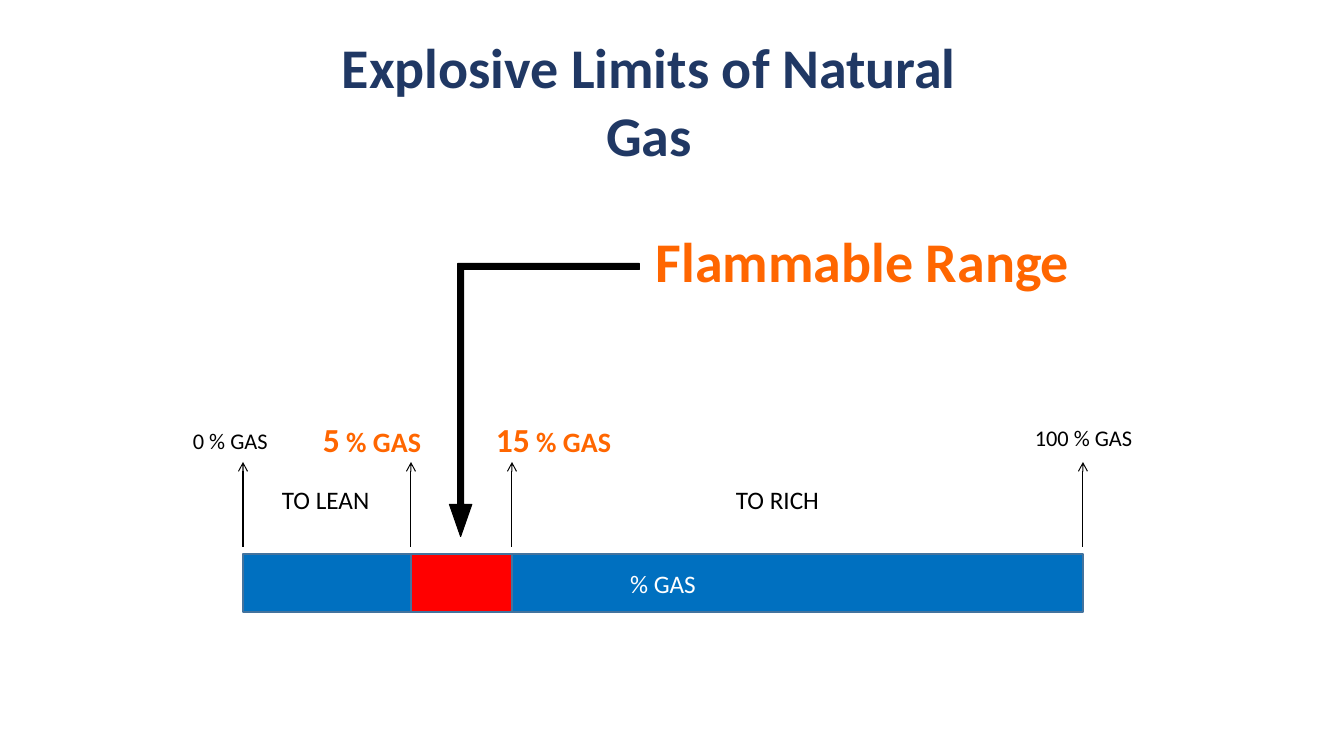
"""Builds the slide on the explosive limits of natural gas."""
import pptx
import pptx.dml.color
import pptx.enum.shapes
import pptx.enum.text
import pptx.oxml
import pptx.oxml.ns
import pptx.util

SCALE = 914400 / 100.8
SHAPE = pptx.enum.shapes.MSO_SHAPE
ALIGN = pptx.enum.text.PP_ALIGN
NAVY, BLUE, EDGE, RED = "203864", "0070C0", "43739E", "FF0000"
ORANGE, BLACK, WHITE = "FF6600", "000000", "FFFFFF"

LABELS = [
    ((299, 28, 700, 146), [("Explosive Limits of Natural Gas", 40)], NAVY, True, ALIGN.CENTER, True),
    ((646, 222, 436, 77), [("Flammable Range", 40)], ORANGE, True, ALIGN.LEFT, True),
    ((183, 422, 96, 37), [("0 % GAS", 16)], BLACK, False, ALIGN.LEFT, False),
    ((313, 414, 130, 50), [("5", 24), (" % GAS", 20)], ORANGE, True, ALIGN.LEFT, True),
    ((486, 414, 137, 50), [("15", 24), (" % GAS", 20)], ORANGE, True, ALIGN.LEFT, False),
    ((1013, 419, 141, 37), [("100 % GAS", 16)], BLACK, False, ALIGN.CENTER, True),
    ((272, 479, 109, 40), [("TO LEAN", 18)], BLACK, False, ALIGN.LEFT, False),
    ((726, 479, 104, 40), [("TO RICH", 18)], BLACK, False, ALIGN.LEFT, False),
]
LIMITS = [243, 411, 512, 1083]
BAR_TOP, BAR_HIGH = 554, 58
TICK_LOW, TICK_TOP = 547, 462
ARROW = (408, 305, 273, 190)
BENDS = [0.031, 0.059, 0.169, 0]


def px(*sizes):
    return [round(size * SCALE) for size in sizes]


def color(code):
    return pptx.dml.color.RGBColor.from_string(code)


def write(frame, parts, code, bold, align):
    line = frame.paragraphs[0]
    line.alignment = align
    for text, size in parts:
        run = line.add_run()
        run.text = text
        run.font.name = "Calibri"
        run.font.size = pptx.util.Pt(size)
        run.font.bold = bold
        run.font.color.rgb = color(code)


def label(slide, box, parts, code, bold, align, wrap):
    frame = slide.shapes.add_textbox(*px(*box)).text_frame
    frame.word_wrap = wrap
    write(frame, parts, code, bold, align)


def block(slide, kind, box, fill, edge, width):
    shape = slide.shapes.add_shape(kind, *px(*box))
    shape.shadow.inherit = False
    shape.fill.solid()
    shape.fill.fore_color.rgb = color(fill)
    shape.line.color.rgb = color(edge)
    shape.line.width = pptx.util.Pt(width)
    return shape


def tick(slide, x):
    line = slide.shapes.add_connector(
        pptx.enum.shapes.MSO_CONNECTOR.STRAIGHT, *px(x, TICK_LOW, x, TICK_TOP))
    line.line.color.rgb = color(BLACK)
    line.line.width = pptx.util.Pt(0.75)
    head = pptx.oxml.parse_xml(
        f'<a:tailEnd {pptx.oxml.ns.nsdecls("a")} type="arrow"/>')
    line.line._get_or_add_ln().append(head)
    line._element.spPr.append(
        pptx.oxml.parse_xml(f'<a:effectLst {pptx.oxml.ns.nsdecls("a")}/>'))


def main():
    deck = pptx.Presentation()
    deck.slide_width, deck.slide_height = px(1344, 756)
    slide = deck.slides.add_slide(deck.slide_layouts[6])

    zero, low, high, full = LIMITS
    bar = block(slide, SHAPE.RECTANGLE, (zero, BAR_TOP, full - zero, BAR_HIGH), BLUE, EDGE, 1)
    bar.text_frame.vertical_anchor = pptx.enum.text.MSO_ANCHOR.MIDDLE
    write(bar.text_frame, [("% GAS", 18)], WHITE, False, ALIGN.CENTER)
    block(slide, SHAPE.RECTANGLE, (low, BAR_TOP, high - low, BAR_HIGH), RED, EDGE, 1)

    for x in LIMITS:
        tick(slide, x)
    for item in LABELS:
        label(slide, *item)

    arrow = block(slide, SHAPE.BENT_ARROW, ARROW, BLACK, BLACK, 0.75)
    for index, bend in enumerate(BENDS):
        arrow.adjustments[index] = bend
    arrow.rotation = 270
    arrow._element.spPr.get_or_add_xfrm().set("flipH", "1")

    deck.save("out.pptx")


if __name__ == "__main__":
    main()
